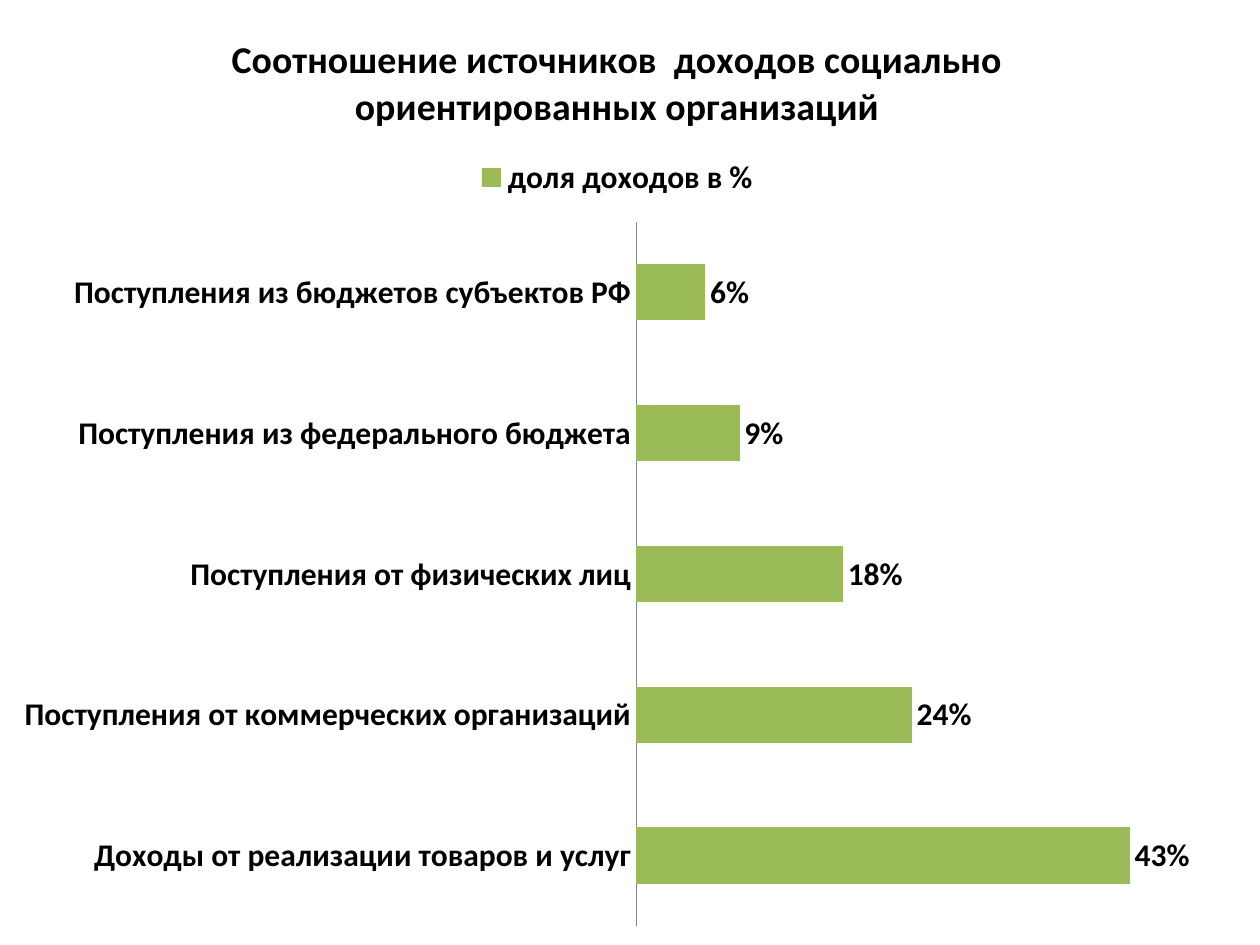
from typing import NamedTuple

from pptx import Presentation
from pptx.chart.data import CategoryChartData
from pptx.dml.color import RGBColor
from pptx.enum.chart import (XL_CHART_TYPE, XL_LABEL_POSITION,
                             XL_LEGEND_POSITION, XL_TICK_MARK)
from pptx.util import Inches, Pt


class IncomeSource(NamedTuple):
    name: str
    share: float


TITLE = "Соотношение источников  доходов социально ориентированных организаций"
SERIES_NAME = "доля доходов в %"
SOURCES = [
    IncomeSource("Доходы от реализации товаров и услуг", 0.43),
    IncomeSource("Поступления от коммерческих организаций", 0.24),
    IncomeSource("Поступления от физических лиц", 0.18),
    IncomeSource("Поступления из федерального бюджета", 0.09),
    IncomeSource("Поступления из бюджетов субъектов РФ", 0.06),
]
GREEN, GREY, BLACK = "9BBB59", "868686", "000000"


def rgb(value: str) -> RGBColor:
    return RGBColor.from_string(value)


def set_attrs(obj, **values) -> None:
    for name, value in values.items():
        setattr(obj, name, value)


def style_font(font, size: float = 18, bold: bool = True) -> None:
    set_attrs(font, name="Calibri", size=Pt(size), bold=bold)
    font.color.rgb = rgb(BLACK)


def add_income_chart(s):
    data = CategoryChartData(number_format="0%")
    data.categories = [source.name for source in SOURCES]
    data.add_series(SERIES_NAME, [source.share for source in SOURCES])
    return s.shapes.add_chart(XL_CHART_TYPE.BAR_CLUSTERED, 0, 0,
                              Inches(9.8), Inches(7.5), data).chart


def format_title(chart) -> None:
    chart.has_title = True
    set_attrs(chart.chart_title, include_in_layout=False)
    p = chart.chart_title.text_frame.paragraphs[0]
    r = p.add_run()
    r.text = TITLE
    style_font(r.font, 21.6)


def format_legend(chart) -> None:
    chart.has_legend = True
    set_attrs(chart.legend, position=XL_LEGEND_POSITION.TOP,
              include_in_layout=False)
    style_font(chart.legend.font)


def format_axes(chart) -> None:
    set_attrs(chart.value_axis, visible=False, has_major_gridlines=False,
              minimum_scale=0, maximum_scale=0.5)
    axis = chart.category_axis
    set_attrs(axis, major_tick_mark=XL_TICK_MARK.NONE,
              minor_tick_mark=XL_TICK_MARK.NONE)
    axis.format.line.color.rgb = rgb(GREY)
    axis.format.line.width = Pt(0.75)
    style_font(axis.tick_labels.font)


def format_bars(chart) -> None:
    plot = chart.plots[0]
    set_attrs(plot, gap_width=150, overlap=-25, vary_by_categories=False)
    series = plot.series[0]
    series.format.fill.solid()
    series.format.fill.fore_color.rgb = rgb(GREEN)
    labels = series.data_labels
    set_attrs(labels, show_value=True, number_format="0%",
              number_format_is_linked=False,
              position=XL_LABEL_POSITION.OUTSIDE_END)
    style_font(labels.font)


def main() -> None:
    prs = Presentation()
    set_attrs(prs, slide_width=Inches(10), slide_height=Inches(7.5))
    s = prs.slides.add_slide(prs.slide_layouts[6])
    chart = add_income_chart(s)
    style_font(chart.font, bold=False)
    for apply_format in (format_title, format_legend, format_axes, format_bars):
        apply_format(chart)
    prs.save("out.pptx")


if __name__ == "__main__":
    main()
